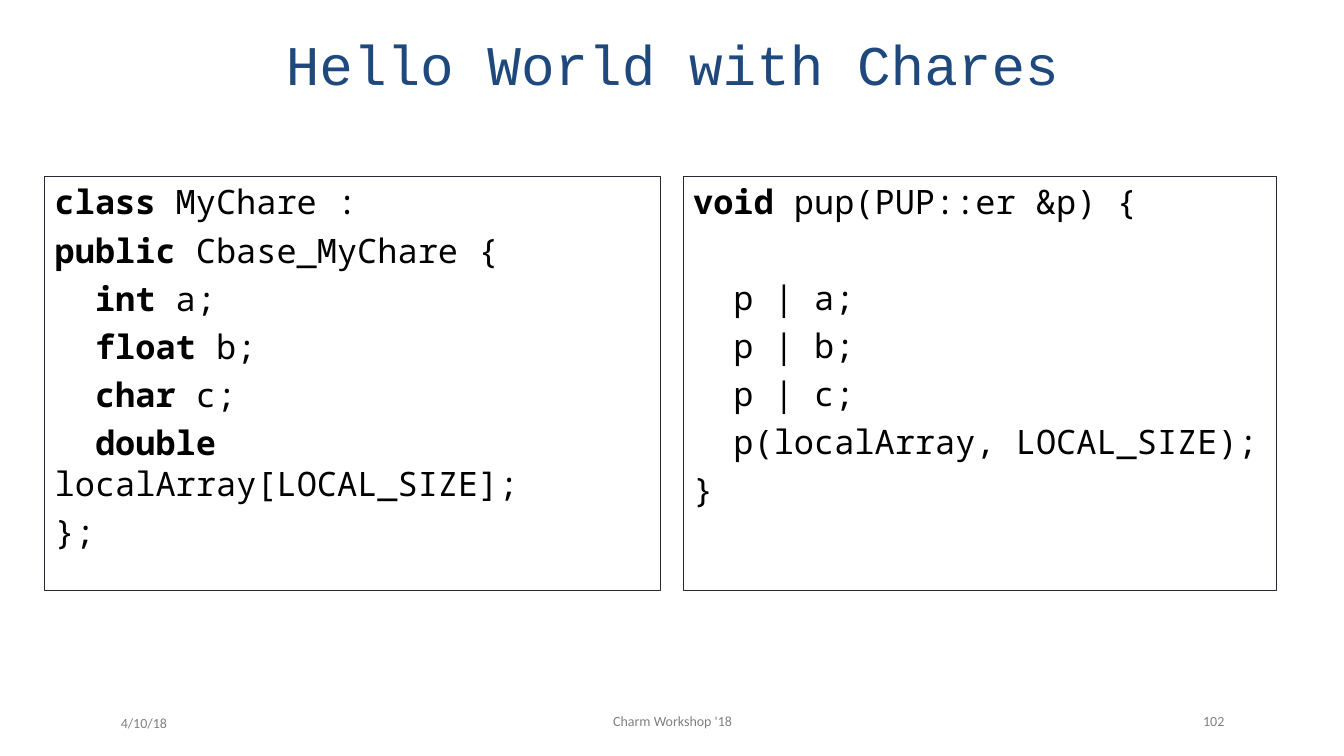
"""Build the slide that shows a chare class beside its pup method."""
from dataclasses import dataclass

from pptx import Presentation
from pptx import util as u
from pptx.dml.color import RGBColor
from pptx.enum import shapes, text

COLS, ROWS = 120, 60
SLIDE_W, SLIDE_H = u.Inches(13.33), u.Inches(7.5)
COLORS = {"title": "1F497D", "code": "000000", "panel": "FFFFFF",
          "border": "292934", "footer": "808080"}
KEYWORDS = {"class", "public", "int", "float", "char", "double", "void"}
LINE_GAP, BLANK_LINE_GAP = 5.6, 39.3


@dataclass(frozen=True)
class Area:
    """A rectangle in grid columns and rows."""
    col: float
    row: float
    cols: float
    rows: float

    def box(self) -> tuple[int, ...]:
        """Return left, top, width and height as slide lengths."""
        cw, rh = SLIDE_W / COLS, SLIDE_H / ROWS
        return tuple(round(v) for v in (self.col * cw, self.row * rh,
                                        self.cols * cw, self.rows * rh))


@dataclass(frozen=True)
class Label:
    """A one-line text with its format."""
    words: str
    area: Area
    align: text.PP_ALIGN
    font: str = "Calibri"
    size: float = 10
    color: str = "footer"


@dataclass(frozen=True)
class CodePanel:
    """A bordered box of source code."""
    area: Area
    code: str


LABELS = [
    Label("Hello World with Chares", Area(4, 1.35, 112, 7.35),
          text.PP_ALIGN.CENTER, "Courier New", 40, "title"),
    Label("4/10/18", Area(9.9, 55.75, 18.2, 3.2), text.PP_ALIGN.LEFT),
    Label("102", Area(97.5, 55.6, 12.7, 3.2), text.PP_ALIGN.RIGHT),
    Label("Charm Workshop '18", Area(36.9, 55.6, 46.3, 3.2), text.PP_ALIGN.CENTER),
]

PANELS = [
    CodePanel(Area(4, 14, 55, 32.9), """class MyChare :
public Cbase_MyChare {
  int a;
  float b;
  char c;
  double localArray[LOCAL_SIZE];
};"""),
    CodePanel(Area(61, 14, 53, 32.9), """void pup(PUP::er &p) {

  p | a;
  p | b;
  p | c;
  p(localArray, LOCAL_SIZE);
}"""),
]


def rgb(name: str) -> RGBColor:
    """Return a named colour."""
    return RGBColor.from_string(COLORS[name])


def add_run(p, words: str, *, font: str, size: float, color: str,
            bold: bool = False) -> None:
    """Append formatted text to a paragraph."""
    r = p.add_run()
    r.text = words
    r.font.name, r.font.size, r.font.bold = font, u.Pt(size), bold
    r.font.color.rgb = rgb(color)


def add_label(s, label: Label) -> None:
    """Draw a label centred vertically in its area."""
    tf = s.shapes.add_textbox(*label.area.box()).text_frame
    tf.word_wrap = True
    tf.vertical_anchor = text.MSO_ANCHOR.MIDDLE
    p = tf.paragraphs[0]
    p.alignment = label.align
    add_run(p, label.words, font=label.font, size=label.size, color=label.color)


def add_code_line(p, line: str) -> None:
    """Write a line of code with its leading keyword in bold."""
    style = {"font": "Noto Sans Mono", "size": 24, "color": "code"}
    keyword, _, rest = line.lstrip().partition(" ")
    if keyword not in KEYWORDS:
        add_run(p, line, **style)
        return
    indent = line[:len(line) - len(line.lstrip())]
    add_run(p, indent + keyword, bold=True, **style)
    add_run(p, " " + rest, **style)


def add_panel(s, panel: CodePanel) -> None:
    """Draw a code panel, turning empty code lines into paragraph spacing."""
    sp = s.shapes.add_shape(shapes.MSO_SHAPE.RECTANGLE, *panel.area.box())
    sp.shadow.inherit = False
    sp.fill.solid()
    sp.fill.fore_color.rgb = rgb("panel")
    sp.line.color.rgb = rgb("border")
    sp.line.width = u.Pt(0.75)
    tf = sp.text_frame
    tf.word_wrap = True
    tf.vertical_anchor = text.MSO_ANCHOR.TOP
    lines = panel.code.split("\n")
    for i, line in enumerate(lines):
        if not line:
            continue
        p = tf.add_paragraph() if i else tf.paragraphs[0]
        p.alignment = text.PP_ALIGN.LEFT
        if i:
            p.space_before = u.Pt(LINE_GAP if lines[i - 1] else BLANK_LINE_GAP)
        add_code_line(p, line)


def main() -> None:
    """Build and save the slide."""
    prs = Presentation()
    prs.slide_width, prs.slide_height = SLIDE_W, SLIDE_H
    s = prs.slides.add_slide(prs.slide_layouts[6])
    for panel in PANELS:
        add_panel(s, panel)
    for label in LABELS:
        add_label(s, label)
    prs.save("out.pptx")


if __name__ == "__main__":
    main()
